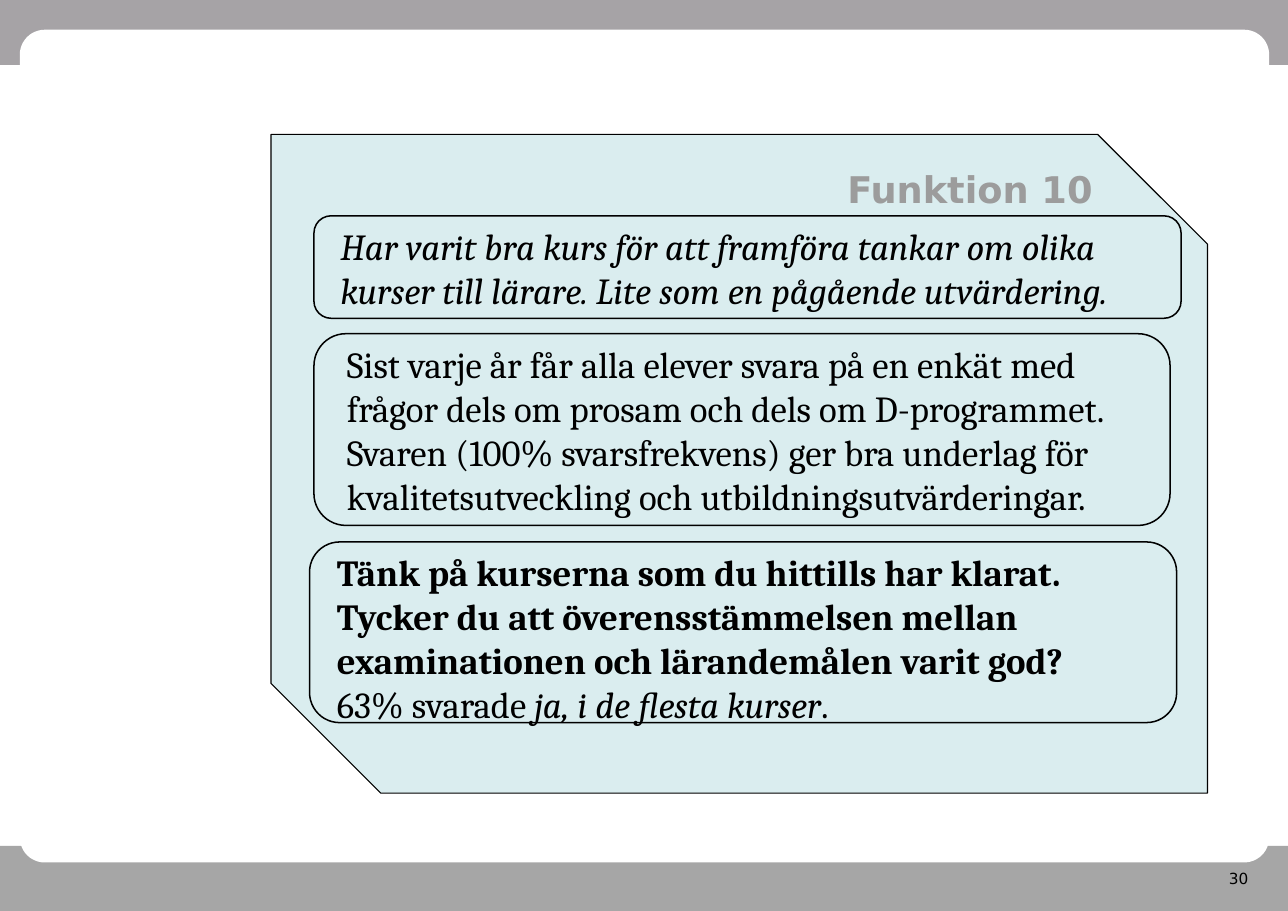
"""Builds the slide "Funktion 10" with three survey notes on a snipped panel."""
from pptx import Presentation
from pptx.dml.color import RGBColor
from pptx.enum.shapes import MSO_SHAPE
from pptx.enum.text import MSO_ANCHOR, MSO_AUTO_SIZE, PP_ALIGN
from pptx.util import Pt

RECT, ROUND = MSO_SHAPE.RECTANGLE, MSO_SHAPE.ROUNDED_RECTANGLE
SNIP = MSO_SHAPE.SNIP_2_DIAG_RECTANGLE
TOP, NO_FIT = MSO_ANCHOR.TOP, MSO_AUTO_SIZE.NONE
LEFT, RIGHT = PP_ALIGN.LEFT, PP_ALIGN.RIGHT

PX = 9144
THEME = {
    "top_bar": "A6A3A6", "bottom_bar": "A6A6A6", "page": "FFFFFF",
    "panel": "DAEDEF", "line": "000000",
    "title": {"name": "DejaVu Sans", "size": Pt(24), "bold": True, "color": "9C9C9C"},
    "body": {"name": "Cambria", "size": Pt(24), "color": "000000"},
    "number": {"name": "DejaVu Sans", "size": Pt(10), "color": "000000"},
}


def add_box(kind, box, fill=None, line_width=None):
    """Adds a preset shape, box being left, top, width and height in px."""
    sp = s.shapes.add_shape(kind, *[v * PX for v in box])
    sp.shadow.inherit = False
    if fill:
        sp.fill.solid()
        sp.fill.fore_color.rgb = RGBColor.from_string(THEME[fill])
    else:
        sp.fill.background()
    if line_width:
        sp.line.color.rgb = RGBColor.from_string(THEME["line"])
        sp.line.width = Pt(line_width)
    else:
        sp.line.fill.background()
    return sp


def set_text(sp, box, style, paragraphs, align=LEFT, inset=(10, 5)):
    """Places a text shape and writes paragraphs of (text, format) runs."""
    sp.left, sp.top, sp.width, sp.height = [v * PX for v in box]
    tf = sp.text_frame
    tf.word_wrap, tf.auto_size, tf.vertical_anchor = True, NO_FIT, TOP
    tf.margin_left = tf.margin_right = inset[0] * PX
    tf.margin_top = tf.margin_bottom = inset[1] * PX
    for i, runs in enumerate(paragraphs):
        p = tf.add_paragraph() if i else tf.paragraphs[0]
        p.alignment = align
        for text, extra in runs:
            r = p.add_run()
            r.text = text
            for key, value in {**THEME[style], **extra}.items():
                if key == "color":
                    r.font.color.rgb = RGBColor.from_string(value)
                else:
                    setattr(r.font, key, value)


prs = Presentation()
prs.slide_width, prs.slide_height = 1169 * PX, 827 * PX
s = prs.slides.add_slide(prs.slide_layouts[5])

add_box(RECT, (0, 0, 1169, 59), "top_bar")
add_box(RECT, (0, 768, 1169, 59), "bottom_bar")
page = add_box(ROUND, (18, 27, 1134, 756), "page")
page.adjustments[0] = 0.03
set_text(s.shapes.add_textbox(0, 0, 0, 0), (900, 783, 244, 30), "number",
         [[("30", {})]], RIGHT, (11, 6))

panel = add_box(SNIP, (246, 122, 850, 598), "panel", 0.75)
title = s.shapes.title
panel.element.addnext(title.element)
set_text(title, (759, 146, 244, 50), "title", [[("Funktion 10", {})]])
title.text_frame.word_wrap = False

notes = [
    ((285, 196, 787, 93), (299, 198, 750, 91), [
        [("Har varit bra kurs för att framföra tankar om olika kurser till lärare. "
          "Lite som en pågående utvärdering.", {"italic": True})]]),
    ((285, 303, 777, 174), (305, 305, 750, 172), [
        [("Sist varje år får alla elever svara på en enkät med frågor dels om prosam "
          "och dels om D-programmet. Svaren (100% svarsfrekvens) ger bra underlag för "
          "kvalitetsutveckling och utbildningsutvärderingar.", {})]]),
    ((281, 492, 787, 164), (296, 494, 755, 172), [
        [("Tänk på kurserna som du hittills har klarat. Tycker du att "
          "överensstämmelsen mellan examinationen och lärandemålen varit god?",
          {"bold": True})],
        [("63% svarade ", {}), ("ja, i de flesta kurser", {"italic": True}), (".", {})]]),
]
for frame, box, paragraphs in notes:
    add_box(ROUND, frame, line_width=1)
    set_text(s.shapes.add_textbox(0, 0, 0, 0), box, "body", paragraphs)

prs.save("out.pptx")
